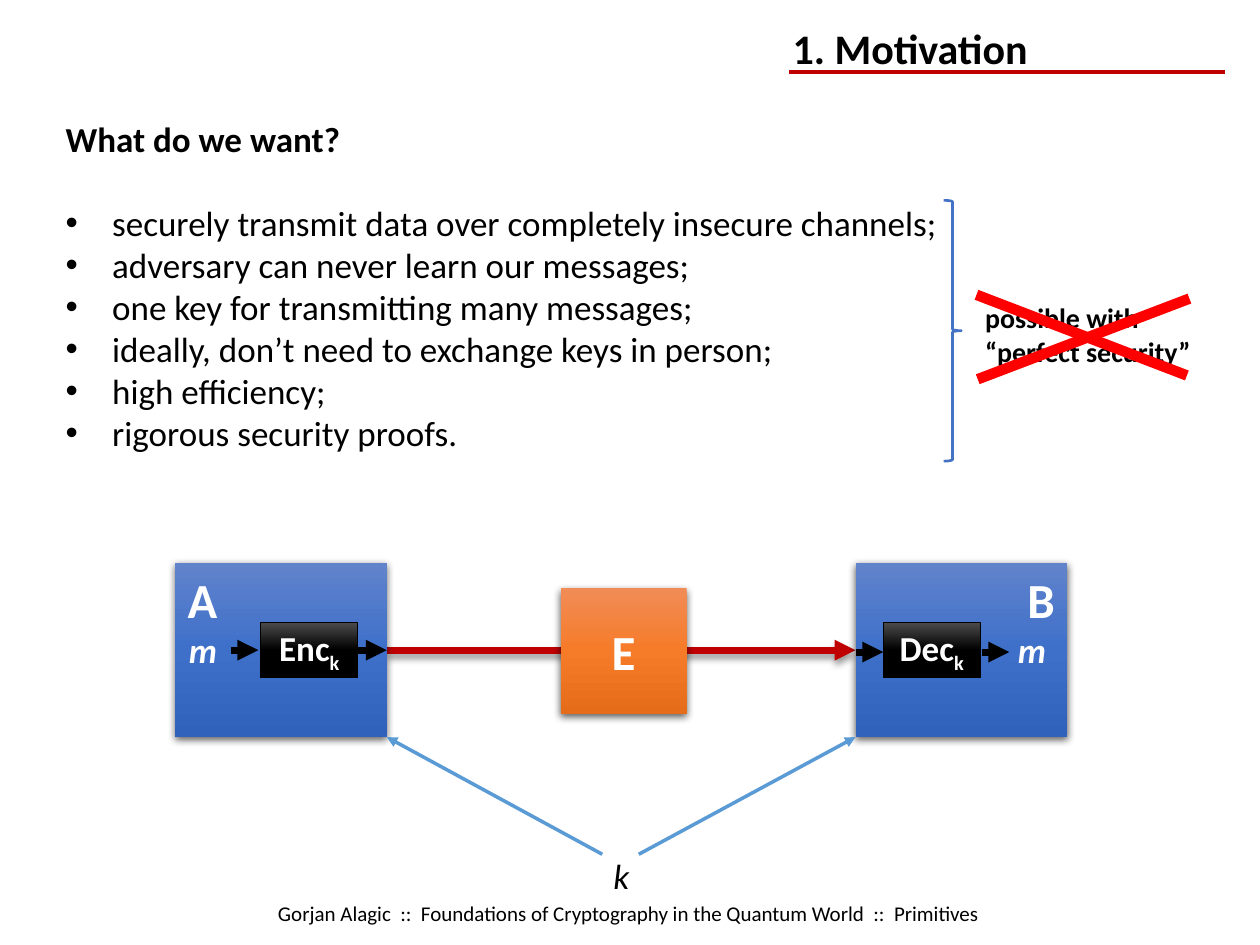
from copy import deepcopy
from dataclasses import dataclass

from lxml import etree
from pptx import Presentation
from pptx.dml.color import RGBColor
from pptx.enum.shapes import MSO_CONNECTOR, MSO_SHAPE
from pptx.enum.text import MSO_ANCHOR, MSO_AUTO_SIZE, PP_ALIGN
from pptx.oxml.ns import qn
from pptx.util import Inches, Pt

LEFT, CENTER, RIGHT = PP_ALIGN.LEFT, PP_ALIGN.CENTER, PP_ALIGN.RIGHT
TOP, MIDDLE = MSO_ANCHOR.TOP, MSO_ANCHOR.MIDDLE
COLUMNS, ROWS = 100, 75
CELL = Inches(10) / COLUMNS


@dataclass(frozen=True)
class Theme:
    font: str = "Calibri"
    black: str = "000000"
    white: str = "FFFFFF"
    channel: str = "C00000"
    cross: str = "FF0000"
    key: str = "5B9BD5"
    brace: str = "4472C4"
    party: tuple = ("6183CB", "3E70CA", "3062BB")
    adversary: tuple = ("F18C57", "F67B28", "E56C19")
    machine: tuple = ("4B4B4B", "000000", "000000")
    box_shadow: tuple = (4.5, 1.5, 63)
    line_shadow: tuple = (4, 3, 40)
    title: int = 24
    body: int = 20
    label: int = 28
    note: int = 16
    footer: int = 12


THEME = Theme()


@dataclass(frozen=True)
class Box:
    left: float
    top: float
    width: float
    height: float

    def inner(self, left, top, width, height):
        return Box(self.left + left, self.top + top, width, height)

    def point(self, column, row):
        return self.left + column, self.top + row

    def lengths(self):
        return [cells(n) for n in (self.left, self.top, self.width, self.height)]


def cells(count):
    return round(count * CELL)


def set_effects(shape, shadow=None):
    effects = etree.SubElement(shape._element.spPr, qn("a:effectLst"))
    if shadow:
        blur, distance, opacity = shadow
        outer = etree.SubElement(effects, qn("a:outerShdw"), blurRad=str(Pt(blur)),
                                 dist=str(Pt(distance)), dir="5400000", rotWithShape="0")
        color = etree.SubElement(outer, qn("a:srgbClr"), val=THEME.black)
        etree.SubElement(color, qn("a:alpha"), val=str(opacity * 1000))


def format_text(paragraph, size, color=THEME.black, bold=False, italic=False, align=LEFT):
    paragraph.alignment = align
    for run in paragraph.runs:
        font = run.font
        font.name, font.size, font.bold, font.italic = THEME.font, Pt(size), bold, italic
        font.color.rgb = RGBColor.from_string(color)


def set_bullet(paragraph, indent=0):
    properties = paragraph._p.get_or_add_pPr()
    properties.set("marL", str(cells(indent)))
    properties.set("indent", str(-cells(indent)))
    if indent:
        etree.SubElement(properties, qn("a:buFont"), typeface="Arial")
        etree.SubElement(properties, qn("a:buChar"), char="•")
    else:
        etree.SubElement(properties, qn("a:buNone"))


def place_placeholder(placeholder, box, wrap):
    placeholder.left, placeholder.top, placeholder.width, placeholder.height = box.lengths()
    frame = placeholder.text_frame
    frame.word_wrap, frame.vertical_anchor = wrap, TOP
    frame.auto_size = MSO_AUTO_SIZE.NONE
    return frame


def add_text(slide, box, text, size, wrap=False, **style):
    frame = slide.shapes.add_textbox(*box.lengths()).text_frame
    frame.word_wrap = wrap
    frame.text = text
    for paragraph in frame.paragraphs:
        format_text(paragraph, size, **style)


def add_line(slide, start, end, color, width, arrow=False, shadow=None):
    points = [cells(n) for n in (*start, *end)]
    line = slide.shapes.add_connector(MSO_CONNECTOR.STRAIGHT, *points)
    line.line.color.rgb = RGBColor.from_string(color)
    line.line.width = Pt(width)
    if arrow:
        etree.SubElement(line.line._get_or_add_ln(), qn("a:tailEnd"), type="triangle")
    set_effects(line, shadow)


def add_block(slide, box, text, colors, size, align=CENTER, anchor=MIDDLE,
              subscript="", outline=False):
    shape = slide.shapes.add_shape(MSO_SHAPE.RECTANGLE, *box.lengths())
    shape.fill.gradient()
    shape.fill.gradient_angle = 270
    first = shape._element.spPr.find(".//" + qn("a:gs"))
    first.addnext(deepcopy(first))
    for stop, position, color in zip(shape.fill.gradient_stops, (0, 0.5, 1), colors):
        stop.position = position
        stop.color.rgb = RGBColor.from_string(color)
    if outline:
        shape.line.color.rgb = RGBColor.from_string(THEME.black)
        shape.line.width = Pt(0.5)
    else:
        shape.line.fill.background()
    set_effects(shape, None if outline else THEME.box_shadow)
    frame = shape.text_frame
    frame.text, frame.vertical_anchor = text, anchor
    paragraph = frame.paragraphs[0]
    if subscript:
        run = paragraph.add_run()
        run.text = subscript
        run.font._element.set("baseline", "-25000")
    format_text(paragraph, size, THEME.white, bold=True, align=align)


def add_header(slide, box, text):
    frame = place_placeholder(slide.shapes.title, box.inner(0, 0, 20.9, 5), False)
    frame.text = text
    format_text(frame.paragraphs[0], THEME.title, bold=True)
    add_line(slide, box.point(box.width, 4.4), box.point(0.7, 4.4), THEME.channel, 2.25)


def add_goals(slide, box, heading, goals):
    frame = place_placeholder(slide.placeholders[1], box, True)
    frame.text = "\n".join([heading, *goals])
    for index, paragraph in enumerate(frame.paragraphs):
        paragraph.space_before = Pt(24 if index == 1 else 0)
        set_bullet(paragraph, 3.7 if index else 0)
        format_text(paragraph, THEME.body, bold=index == 0)


def add_rejected_note(slide, box, text):
    brace = slide.shapes.add_shape(MSO_SHAPE.RIGHT_BRACE,
                                   *box.inner(0, 0, 1.4, box.height).lengths())
    brace.fill.background()
    brace.line.color.rgb = RGBColor.from_string(THEME.brace)
    brace.line.width = Pt(1.5)
    set_effects(brace)
    add_text(slide, box.inner(2.3, 7.5, 18.6, 6.4), text, THEME.note, bold=True)
    for start, end in (((2.6, 7.5), (19.3, 13.9)), ((19.5, 7.8), (2.7, 14.2))):
        add_line(slide, box.point(*start), box.point(*end), THEME.cross, 6)


def add_party(slide, box, name, align, machine, machine_left, message_left, arrows, arrow_row):
    add_block(slide, box, name, THEME.party, THEME.label, align, TOP)
    add_text(slide, box.inner(message_left, 4.7, 4.3, 4.4), "m", THEME.body,
             color=THEME.white, bold=True, italic=True)
    add_block(slide, box.inner(machine_left, 4.7, 7.7, 4.4), machine, THEME.machine,
              THEME.body, subscript="k", outline=True)
    for start, end in arrows:
        add_line(slide, box.point(start, arrow_row), box.point(end, arrow_row),
                 THEME.black, 4, arrow=True)


def add_protocol(slide, box):
    party_width, party_height, channel_row = 16.8, 13.8, 6.9
    receiver_left = box.width - party_width
    add_line(slide, box.point(party_width, channel_row), box.point(receiver_left, channel_row),
             THEME.channel, 4, arrow=True, shadow=THEME.line_shadow)
    add_party(slide, box.inner(0, 0, party_width, party_height), "A", LEFT, "Enc",
              6.8, 0.1, ((4.4, 6.6), (14.5, 16.8)), channel_row)
    add_party(slide, box.inner(receiver_left, 0, party_width, party_height), "B", RIGHT, "Dec",
              2.2, 11.9, ((0, 2.2), (10, 12.2)), channel_row + 0.15)
    add_block(slide, box.inner(30.6, 2, 10, 10), "E", THEME.adversary, THEME.label)
    add_text(slide, box.inner(33.8, 22.6, 3.3, 4.4), "k", THEME.body, italic=True)
    for start, end in ((33.9, party_width), (36.8, receiver_left)):
        add_line(slide, box.point(start, 23.1), box.point(end, party_height),
                 THEME.key, 2, arrow=True)


def main():
    presentation = Presentation()
    presentation.slide_width, presentation.slide_height = cells(COLUMNS), cells(ROWS)
    slide = presentation.slides.add_slide(presentation.slide_layouts[1])
    add_header(slide, Box(61.9, 1.3, 35.3, 5), "1. Motivation")
    add_goals(slide, Box(4.2, 8.8, 93, 31.3), "What do we want?", [
        "securely transmit data over completely insecure channels;",
        "adversary can never learn our messages;",
        "one key for transmitting many messages;",
        "ideally, don’t need to exchange keys in person;",
        "high efficiency;",
        "rigorous security proofs.",
    ])
    add_rejected_note(slide, Box(74.9, 15.9, 20.9, 20.7), "possible with\n“perfect security”")
    add_protocol(slide, Box(13.9, 44.7, 70.8, 27))
    add_text(slide, Box(2.7, 71, 94.4, 3),
             "Gorjan Alagic  ::  Foundations of Cryptography in the Quantum World  ::  Primitives",
             THEME.footer, wrap=True, align=CENTER)
    presentation.save("out.pptx")


if __name__ == "__main__":
    main()
